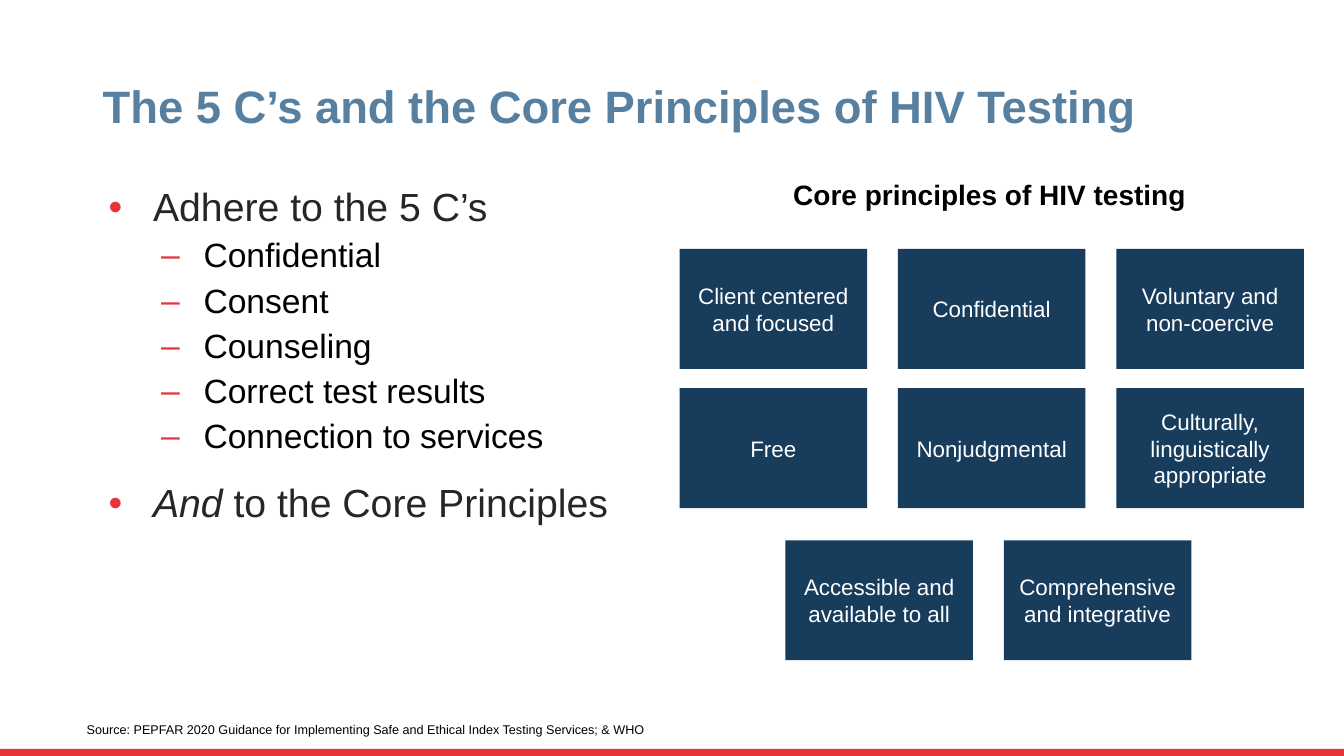
import pptx
import pptx.dml.color
import pptx.enum.shapes
import pptx.enum.text
import pptx.oxml.ns
import pptx.util
from lxml import etree

Inches = pptx.util.Inches
Pt = pptx.util.Pt
RGBColor = pptx.dml.color.RGBColor
ANCHOR = pptx.enum.text.MSO_ANCHOR
ALIGN = pptx.enum.text.PP_ALIGN

RED = RGBColor(0xE7, 0x34, 0x39)
STEEL = RGBColor(0x57, 0x7F, 0x9F)
NAVY = RGBColor(0x18, 0x3C, 0x5C)
CHARCOAL = RGBColor(0x26, 0x26, 0x26)
BLACK = RGBColor(0, 0, 0)
WHITE = RGBColor(0xFF, 0xFF, 0xFF)

TITLE = "The 5 C’s and the Core Principles of HIV Testing"
PRINCIPLES_HEADING = "Core principles of HIV testing"
SOURCE = "Source: PEPFAR 2020 Guidance for Implementing Safe and Ethical Index Testing Services; & WHO"
OUTLINE = [
    (0, [("Adhere to the 5 C’s", False)]),
    (1, [("Confidential", False)]),
    (1, [("Consent", False)]),
    (1, [("Counseling", False)]),
    (1, [("Correct test results", False)]),
    (1, [("Connection to services", False)]),
    (0, [("And", True), (" to the Core Principles", False)]),
]
LEVELS = [
    {"bullet": "•", "margin": 0.5, "indent": -0.44, "before": 18, "size": 28, "color": CHARCOAL},
    {"bullet": "–", "margin": 1, "indent": -0.42, "before": 5, "size": 24, "color": BLACK},
]
PRINCIPLE_ROWS = [
    (6.74, 2.47, ["Client centered and focused", "Confidential", "Voluntary and non-coercive"]),
    (6.74, 3.85, ["Free", "Nonjudgmental", "Culturally, linguistically appropriate"]),
    (7.79, 5.36, ["Accessible and available to all", "Comprehensive and integrative"]),
]
CARD_WIDTH, CARD_HEIGHT, CARD_PITCH = 1.86, 1.19, 2.166

deck = pptx.Presentation()
deck.slide_width, deck.slide_height = Inches(13.33), Inches(7.5)
slide = deck.slides.add_slide(deck.slide_layouts[6])


def set_all(target, values):
    for name, value in values.items():
        setattr(target, name, value)


def add_run(paragraph, text, size, color, **styles):
    run = paragraph.add_run()
    run.text = text
    set_all(run.font, {"name": "Arial", "size": Pt(size), **styles})
    run.font.color.rgb = color


def add_text_box(left, top, width, height, **frame_values):
    frame = slide.shapes.add_textbox(*map(Inches, (left, top, width, height))).text_frame
    set_all(frame, {"word_wrap": True, **frame_values})
    return frame


def add_block(left, top, width, height, fill):
    block = slide.shapes.add_shape(
        pptx.enum.shapes.MSO_SHAPE.RECTANGLE, *map(Inches, (left, top, width, height)))
    block.shadow.inherit = False
    block.fill.solid()
    block.fill.fore_color.rgb = fill
    block.line.fill.background()
    return block


def add_bullet(paragraph, level):
    properties = paragraph._p.get_or_add_pPr()
    properties.set("marL", str(Inches(level["margin"])))
    properties.set("indent", str(Inches(level["indent"])))
    qn = pptx.oxml.ns.qn
    bullet_color = etree.SubElement(properties, qn("a:buClr"))
    etree.SubElement(bullet_color, qn("a:srgbClr"), val=str(RED))
    etree.SubElement(properties, qn("a:buFont"), typeface="Arial")
    etree.SubElement(properties, qn("a:buChar"), char=level["bullet"])


add_block(0, 7.43, 13.33, 0.08, RED)

title = add_text_box(0.92, 0.64, 11.5, 0.87, vertical_anchor=ANCHOR.MIDDLE).paragraphs[0]
title.line_spacing = 0.9
add_run(title, TITLE, 32.4, STEEL, bold=True)

outline = add_text_box(0.92, 1.79, 5.68, 5.39)
for number, (depth, pieces) in enumerate(OUTLINE):
    entry = outline.add_paragraph() if number else outline.paragraphs[0]
    level = LEVELS[depth]
    set_all(entry, {"level": depth, "line_spacing": 0.95, "space_before": Pt(level["before"])})
    add_bullet(entry, level)
    for text, italic in pieces:
        add_run(entry, text, level["size"], level["color"], italic=italic)

source = add_text_box(
    0.79, 7.12, 5.95, 0.23, margin_left=Inches(0.07), margin_right=Inches(0.07),
    margin_top=Inches(0.04), margin_bottom=Inches(0.04))
add_run(source.paragraphs[0], SOURCE, 9, BLACK)

for row_left, row_top, principles in PRINCIPLE_ROWS:
    for column, principle in enumerate(principles):
        card = add_block(row_left + column * CARD_PITCH, row_top, CARD_WIDTH, CARD_HEIGHT, NAVY)
        set_all(card.text_frame, {"word_wrap": True, "vertical_anchor": ANCHOR.MIDDLE})
        label = card.text_frame.paragraphs[0]
        label.alignment = ALIGN.CENTER
        add_run(label, principle, 16, WHITE)

heading = add_text_box(7.62, 1.71, 4.39, 0.44, vertical_anchor=ANCHOR.MIDDLE).paragraphs[0]
heading.alignment = ALIGN.CENTER
add_run(heading, PRINCIPLES_HEADING, 20, BLACK, bold=True)

deck.save("out.pptx")
